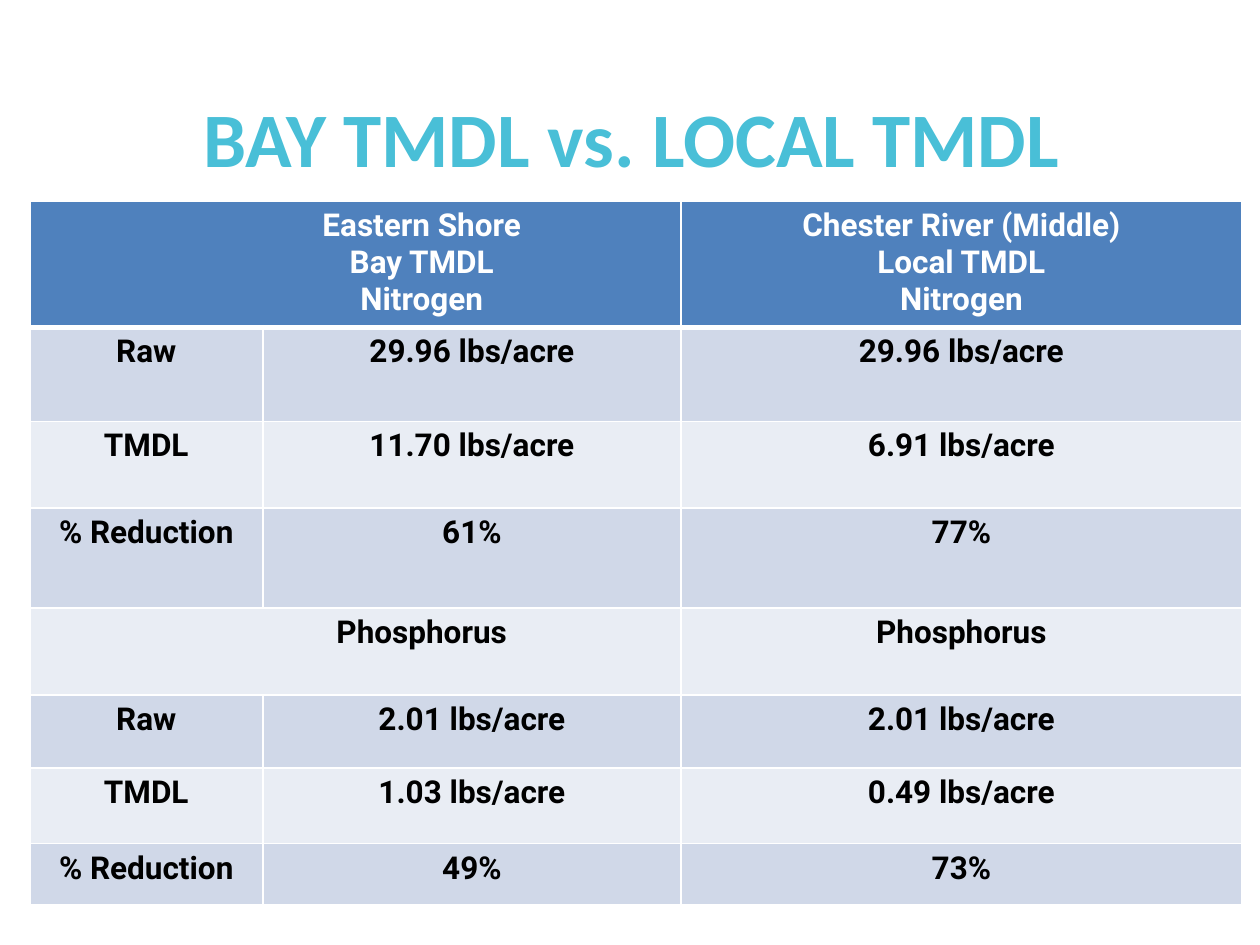
"""Build a slide comparing Bay and Local TMDL nutrient reductions."""
from dataclasses import dataclass

import pptx
import pptx.dml.color
import pptx.enum.text
import pptx.oxml
import pptx.oxml.ns
import pptx.util

Pt = pptx.util.Pt
RGB = pptx.dml.color.RGBColor


@dataclass(frozen=True)
class Theme:
    title_color: str = "49BFD7"
    header_fill: str = "4F81BD"
    odd_fill: str = "D0D8E8"
    even_fill: str = "E9EDF4"
    white: str = "FFFFFF"
    black: str = "000000"
    title_font: str = "Calibri"
    table_font: str = "Roboto"
    title_size: float = 44
    table_size: float = 18
    rule: float = 1
    header_rule: float = 3


@dataclass(frozen=True)
class Row:
    height: float
    label: str
    bay: str
    local: str


THEME = Theme()
TABLE_LEFT, TABLE_TOP = 17, 115
COLUMN_WIDTHS = (133.2, 239, 320.4)
HEADING_INDENT = 83
ROWS = (
    Row(70, "", "Eastern Shore\nBay TMDL\nNitrogen",
        "Chester River (Middle)\nLocal TMDL\nNitrogen"),
    Row(53.7, "Raw", "29.96 lbs/acre", "29.96 lbs/acre"),
    Row(49.6, "TMDL", "11.70 lbs/acre", "6.91 lbs/acre"),
    Row(57.2, "% Reduction", "61%", "77%"),
    Row(49.6, "", "Phosphorus", "Phosphorus"),
    Row(41.8, "Raw", "2.01 lbs/acre", "2.01 lbs/acre"),
    Row(43.3, "TMDL", "1.03 lbs/acre", "0.49 lbs/acre"),
    Row(35, "% Reduction", "49%", "73%"),
)


def add_text(frame, text: str, font: str, size: float, color: str) -> None:
    """Write centred bold lines, one paragraph each."""
    for index, line in enumerate(text.split("\n")):
        para = frame.add_paragraph() if index else frame.paragraphs[0]
        para.alignment = pptx.enum.text.PP_ALIGN.CENTER
        span = para.add_run()
        span.text = line
        span.font.name = font
        span.font.size = Pt(size)
        span.font.bold = True
        span.font.color.rgb = RGB.from_string(color)


def add_borders(cell, bottom: float) -> None:
    """Rule all four sides of a cell in white."""
    properties = cell._tc.get_or_add_tcPr()
    sides = {"lnL": THEME.rule, "lnR": THEME.rule, "lnT": THEME.rule, "lnB": bottom}
    for side, width in sides.items():
        properties.append(pptx.oxml.parse_xml(
            f'<a:{side} {pptx.oxml.ns.nsdecls("a")} w="{Pt(width)}"><a:solidFill>'
            f'<a:srgbClr val="{THEME.white}"/></a:solidFill></a:{side}>'))


def style_cell(cell, fill: str, bottom: float) -> None:
    """Apply the borders and fill of a cell."""
    add_borders(cell, bottom)
    cell.fill.solid()
    cell.fill.fore_color.rgb = RGB.from_string(fill)


def add_title(page, text: str) -> None:
    """Place and fill the title placeholder."""
    box = page.shapes.title
    box.left, box.top, box.width, box.height = Pt(0), Pt(48), Pt(722), Pt(60.5)
    frame = box.text_frame
    frame.word_wrap = True
    frame.auto_size = pptx.enum.text.MSO_AUTO_SIZE.SHAPE_TO_FIT_TEXT
    frame.vertical_anchor = pptx.enum.text.MSO_ANCHOR.TOP
    add_text(frame, text, THEME.title_font, THEME.title_size, THEME.title_color)


def add_comparison(page, rows: tuple[Row, ...]) -> None:
    """Draw the comparison table, merging the first two cells of heading rows."""
    height = sum(row.height for row in rows)
    table = page.shapes.add_table(
        len(rows), len(COLUMN_WIDTHS), Pt(TABLE_LEFT), Pt(TABLE_TOP),
        Pt(sum(COLUMN_WIDTHS)), Pt(height)).table
    for column, width in zip(table.columns, COLUMN_WIDTHS):
        column.width = Pt(width)
    for index, row in enumerate(rows):
        table.rows[index].height = Pt(row.height)
        header = index == 0
        fill = THEME.header_fill if header else (THEME.even_fill, THEME.odd_fill)[index % 2]
        color = THEME.white if header else THEME.black
        cells = [table.cell(index, column) for column in range(len(COLUMN_WIDTHS))]
        for cell in cells:
            style_cell(cell, fill, THEME.header_rule if header else THEME.rule)
        texts = (row.label, row.bay, row.local)
        if not row.label:
            cells[0].merge(cells[1])
            cells[0].margin_left = Pt(HEADING_INDENT)
            cells, texts = [cells[0], cells[2]], (row.bay, row.local)
        for cell, text in zip(cells, texts):
            add_text(cell.text_frame, text, THEME.table_font, THEME.table_size, color)


def main() -> None:
    """Build and save the deck."""
    deck = pptx.Presentation()
    deck.slide_width, deck.slide_height = Pt(720), Pt(540)
    page = deck.slides.add_slide(deck.slide_layouts.get_by_name("Title Only"))
    add_title(page, "BAY TMDL vs. LOCAL TMDL")
    add_comparison(page, ROWS)
    deck.save("out.pptx")


if __name__ == "__main__":
    main()
